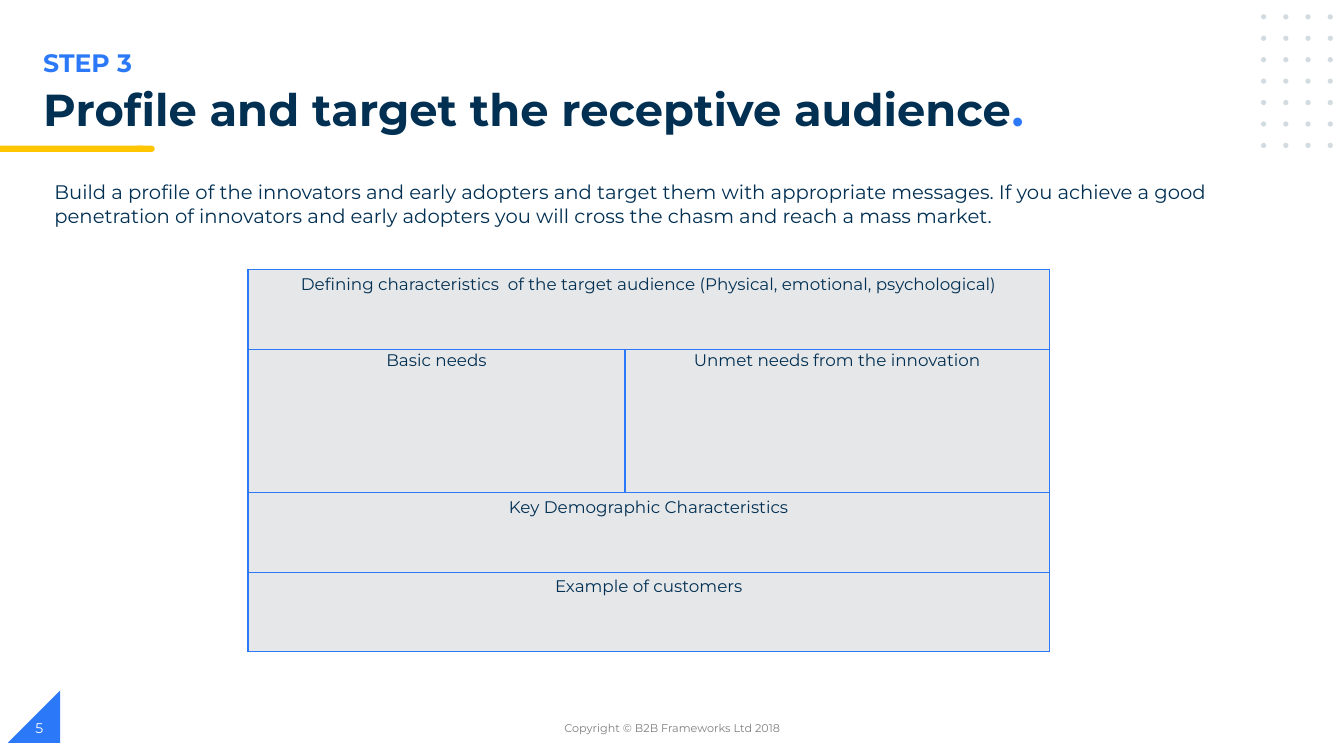
from itertools import product

from lxml.etree import SubElement as Sub
from pptx import Presentation
from pptx.dml.color import RGBColor as Rgb
from pptx.enum.shapes import MSO_SHAPE as Kind
from pptx.enum.text import MSO_ANCHOR as Anchor, PP_ALIGN as Align
from pptx.oxml.ns import qn
from pptx.util import Cm, Pt

INK = {
    "navy": "023053",
    "blue": "2B79F8",
    "gold": "FFC600",
    "dot": "D1DBE0",
    "cell": "E6E7E9",
    "gray": "7F7F7F",
    "white": "FFFFFF",
}


def paint(fill, ink):
    """Give a fill one solid colour."""
    fill.solid()
    fill.fore_color.rgb = Rgb.from_string(INK[ink])


def write(frame, *runs, size=12, bold=False, align=Align.LEFT, space=None):
    """Write (words, ink) runs as one paragraph of a text frame."""
    para = frame.paragraphs[0]
    para.alignment = align
    if space:
        para.line_spacing = space
    for words, ink in runs:
        run = para.add_run()
        run.text = words
        font = run.font
        font.name, font.size, font.bold = "Montserrat", Pt(size), bold
        font.color.rgb = Rgb.from_string(INK[ink])


def label(slide, spot, *runs, anchor=Anchor.TOP, **style):
    """Add a wrapped text box at spot, in centimetres."""
    frame = slide.shapes.add_textbox(*map(Cm, spot)).text_frame
    frame.word_wrap = True
    frame.vertical_anchor = anchor
    write(frame, *runs, **style)


def shape(slide, kind, spot, ink):
    """Add a plain filled shape at spot, in centimetres."""
    item = slide.shapes.add_shape(kind, *map(Cm, spot))
    item.shadow.inherit = False
    paint(item.fill, ink)
    item.line.fill.background()
    return item


def dots(slide):
    """Draw the grid of dots in the top right corner."""
    for row, col in product(range(7), range(4)):
        spot = 31.78 + 0.56 * col, 0.36 + 0.54 * row, 0.13, 0.13
        shape(slide, Kind.OVAL, spot, "dot")


def edge(cell):
    """Put a thin blue border on all sides of a cell."""
    props = cell._tc.get_or_add_tcPr()
    for side in "LRTB":
        line = Sub(props, qn(f"a:ln{side}"), w=str(Pt(1)))
        fill = Sub(line, qn("a:solidFill"))
        Sub(fill, qn("a:srgbClr"), val=INK["blue"])


def grid(slide, left, top, cols, rows):
    """Add the profile table; a row with one text spans all columns."""
    high = sum(size for size, _ in rows)
    frame = slide.shapes.add_table(
        len(rows), len(cols), Cm(left), Cm(top), Cm(sum(cols)), Cm(high))
    table = frame.table
    for col, wide in zip(table.columns, cols):
        col.width = Cm(wide)
    for row, (size, texts) in zip(table.rows, rows):
        row.height = Cm(size)
        cells = list(row.cells)
        whole = len(texts) == 1
        pads = (0.2, 0.1, 0.2, 0.1) if whole else (0.03, 0.03, 0.03, 0)
        for cell in cells:
            edge(cell)
            paint(cell.fill, "cell")
            (cell.margin_left, cell.margin_top,
             cell.margin_right, cell.margin_bottom) = map(Cm, pads)
        if whole:
            cells[0].merge(cells[-1])
        for cell, words in zip(cells, texts):
            write(cell.text_frame, (words, "navy"), align=Align.CENTER)


def main():
    """Build the slide and save it."""
    deck = Presentation()
    deck.slide_width, deck.slide_height = Cm(33.87), Cm(19.05)
    slide = deck.slides.add_slide(deck.slide_layouts[6])

    nook = shape(slide, Kind.RIGHT_TRIANGLE, (0.2, 17.4, 1.32, 1.32), "blue")
    nook._element.spPr.xfrm.set("flipH", "1")
    dots(slide)
    shape(slide, Kind.FLOWCHART_TERMINATOR, (3.4, 3.67, 0.5, 0.16), "gold")
    shape(slide, Kind.RECTANGLE, (0, 3.67, 3.58, 0.16), "gold")

    label(slide, (0.84, 1.07, 3.66, 1.02), ("STEP 3", "blue"),
          size=18, bold=True)
    label(slide, (0.84, 2.08, 27.46, 1.42),
          ("Profile and target the receptive audience", "navy"),
          (".", "blue"), size=32, bold=True, space=0.9)
    label(slide, (1.12, 4.42, 29.9, 1.45),
          ("Build a profile of the innovators and early adopters and target "
           "them with appropriate messages. If you achieve a good penetration "
           "of innovators and early adopters you will cross the chasm and "
           "reach a mass market.", "navy"), size=14)

    grid(slide, 6.25, 6.8, (9.5, 10.7), [
        (2, ["Defining characteristics  of the target audience "
             "(Physical, emotional, psychological)"]),
        (3.62, ["Basic needs", "Unmet needs from the innovation"]),
        (2, ["Key Demographic Characteristics"]),
        (2, ["Example of customers"]),
    ])

    label(slide, (11.23, 17.83, 11.43, 1.02),
          ("Copyright © B2B Frameworks Ltd 2018", "gray"),
          size=8, align=Align.CENTER, anchor=Anchor.MIDDLE)
    label(slide, (0.64, 17.83, 7.62, 1.02), ("5", "white"),
          size=10, anchor=Anchor.MIDDLE)
    deck.save("out.pptx")


if __name__ == "__main__":
    main()
